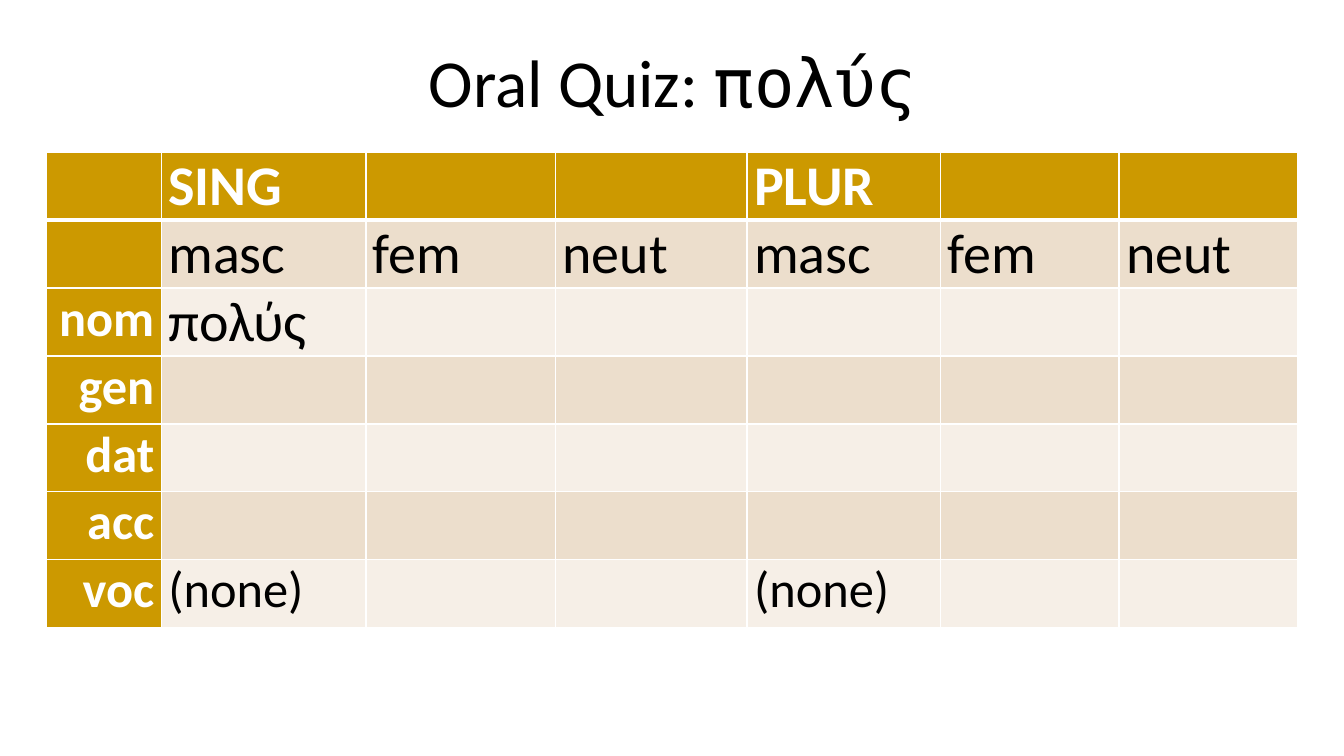
from pptx import Presentation
from pptx.dml.color import RGBColor
from pptx.enum.text import MSO_ANCHOR, PP_ALIGN
from pptx.oxml.ns import qn
from pptx.util import Inches, Pt
from lxml import etree

BOTTOM = MSO_ANCHOR.BOTTOM
LEFT, CENTER, RIGHT = PP_ALIGN.LEFT, PP_ALIGN.CENTER, PP_ALIGN.RIGHT

GOLD, SAND, CREAM = "CC9900", "ECDECC", "F6EFE7"
WHITE, BLACK = "FFFFFF", "000000"

COLUMN_WIDTHS = [1.14, 2.03, 1.88, 1.9, 1.92, 1.77, 1.77]
GENDERS = ["masc", "fem", "neut"]
PARADIGM = [
    ["", "SING", "", "", "PLUR", "", ""],
    ["", *GENDERS, *GENDERS],
    ["nom", "πολύς", "", "", "", "", ""],
    ["gen", "", "", "", "", "", ""],
    ["dat", "", "", "", "", "", ""],
    ["acc", "", "", "", "", "", ""],
    ["voc", "(none)", "", "", "(none)", "", ""],
]


def rgb(value):
    return RGBColor.from_string(value)


def style_font(font, size, color, bold=False, face="Calibri"):
    font.name = face
    font.size = Pt(size)
    font.bold = bold
    font.color.rgb = rgb(color)


def add_border(cell, side, points):
    properties = cell._tc.get_or_add_tcPr()
    line = etree.SubElement(properties, qn(f"a:{side}"), w=str(Pt(points)))
    paint = etree.SubElement(line, qn("a:solidFill"))
    etree.SubElement(paint, qn("a:srgbClr"), val=WHITE)


def add_title(slide, left, top, width, height):
    title = slide.shapes.add_textbox(*map(Inches, (left, top, width, height)))
    frame = title.text_frame
    frame.word_wrap = True
    frame.vertical_anchor = BOTTOM
    heading = frame.paragraphs[0]
    heading.alignment = CENTER
    for words, face in [("Oral Quiz: ", "Calibri"), ("πολύς", "DejaVu Sans Mono")]:
        run = heading.add_run()
        run.text = words
        style_font(run.font, 48, BLACK, face=face)


def fill_cell(cell, words, row, column):
    is_header = row == 0 or column == 0
    is_case_label = column == 0
    cell.margin_left = cell.margin_right = Inches(0.07)
    cell.margin_top = cell.margin_bottom = 0
    for side in ("lnL", "lnR", "lnT", "lnB"):
        at_header_rule = (row, side) in [(0, "lnB"), (1, "lnT")]
        add_border(cell, side, 3 if at_header_rule else 1)
    cell.fill.solid()
    cell.fill.fore_color.rgb = rgb(GOLD if is_header else SAND if row % 2 else CREAM)
    if words:
        cell.text_frame.text = words
        paragraph = cell.text_frame.paragraphs[0]
        paragraph.alignment = RIGHT if is_case_label else LEFT
        size = 36 if is_case_label or words == "(none)" else 40
        style_font(paragraph.runs[0].font, size, WHITE if is_header else BLACK, is_header)


def add_paradigm(slide, left, top, width, height):
    table = slide.shapes.add_table(
        len(PARADIGM), len(COLUMN_WIDTHS), *map(Inches, (left, top, width, height))
    ).table
    for column, share in zip(table.columns, COLUMN_WIDTHS):
        column.width = Inches(width * share / sum(COLUMN_WIDTHS))
    for row, entries in enumerate(PARADIGM):
        for column, words in enumerate(entries):
            fill_cell(table.cell(row, column), words, row, column)


def main():
    deck = Presentation()
    deck.slide_width, deck.slide_height = Inches(13.33), Inches(7.5)
    slide = deck.slides.add_slide(deck.slide_layouts[6])
    slide.background.fill.solid()
    slide.background.fill.fore_color.rgb = rgb(WHITE)
    add_title(slide, 0.67, 0.08, 12, 1.17)
    add_paradigm(slide, 0.46, 1.51, sum(COLUMN_WIDTHS), 4.72)
    deck.save("out.pptx")


if __name__ == "__main__":
    main()
